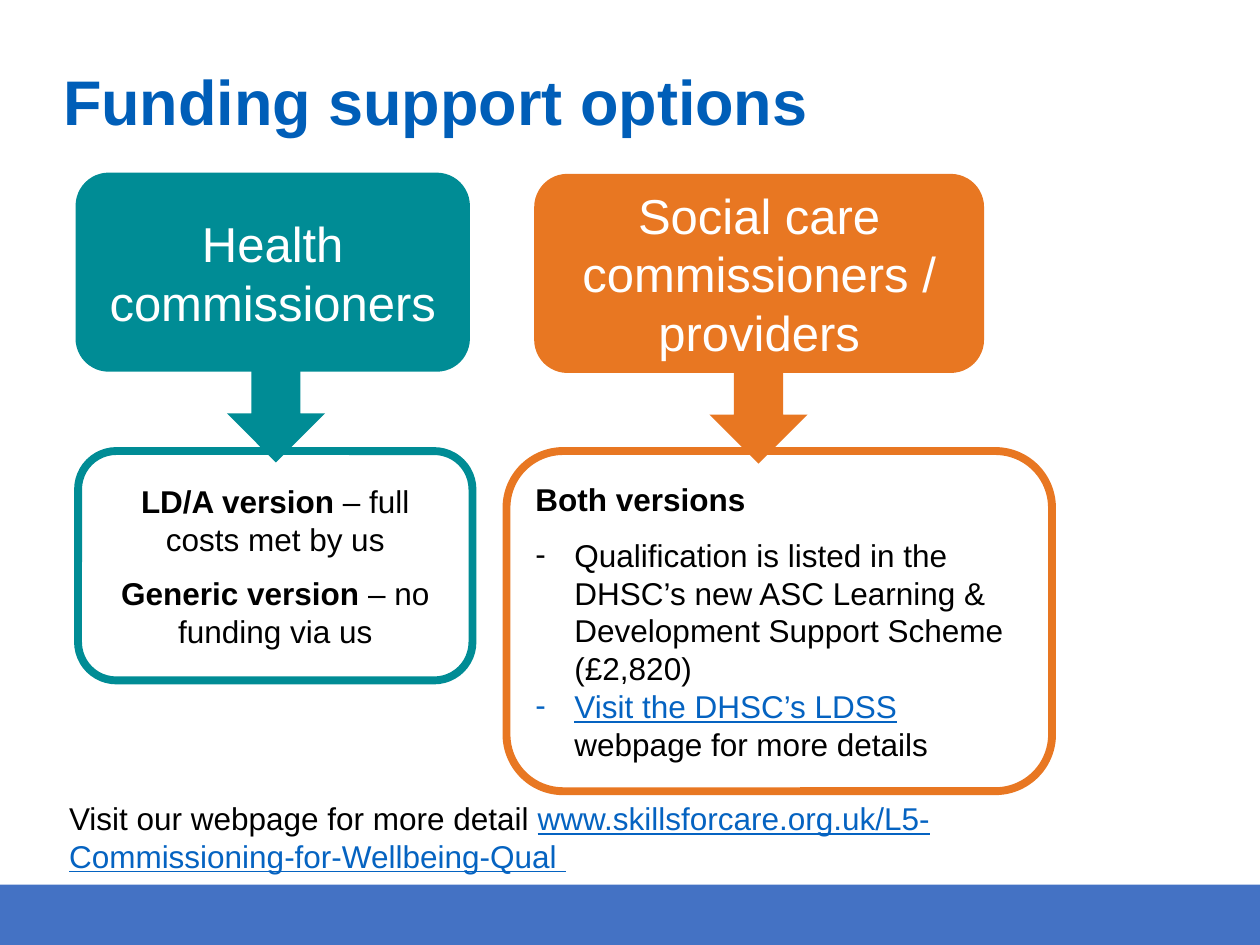
from lxml.etree import SubElement
from pptx import Presentation
from pptx.dml.color import RGBColor
from pptx.enum.shapes import MSO_SHAPE
from pptx.enum.text import MSO_ANCHOR, MSO_AUTO_SIZE, PP_ALIGN
from pptx.oxml.ns import qn
from pptx.util import Inches, Pt

TEAL, ORANGE, BLUE, LINK = "008C95", "E87722", "005EB8", "0563C1"
BLACK, WHITE, BAR = "000000", "FFFFFF", "4472C4"


def color(value):
    return RGBColor.from_string(value)


class FundingSlide:
    """Holds the style and the current slide, and draws each kind of element."""

    font_name = "Arial"
    body_size = 18

    def __init__(self, slide):
        self.slide = slide

    def format_run(self, run, size, fill, bold=False, underline=False):
        font = run.font
        font.name, font.size = self.font_name, Pt(size)
        font.bold, font.underline = bold, underline
        font.color.rgb = color(fill)

    def title(self, wording, box):
        title = self.slide.shapes.title
        title.left, title.top, title.width, title.height = map(Inches, box)
        frame = title.text_frame
        frame.text = wording
        frame.auto_size = MSO_AUTO_SIZE.NONE
        frame.vertical_anchor = MSO_ANCHOR.MIDDLE
        heading = frame.paragraphs[0]
        heading.alignment = PP_ALIGN.LEFT
        heading.line_spacing = 0.9
        self.format_run(heading.runs[0], 36, BLUE, bold=True)

    def shape(self, preset, box, fill=None, line=None):
        shape = self.slide.shapes.add_shape(preset, *map(Inches, box))
        shape.shadow.inherit = False
        if fill:
            shape.fill.solid()
            shape.fill.fore_color.rgb = color(fill)
        else:
            shape.fill.background()
        if line:
            shape.line.color.rgb = color(line)
            shape.line.width = Pt(4.5)
        else:
            shape.line.fill.background()
        return shape

    def heading_box(self, wording, box, fill):
        frame = self.shape(MSO_SHAPE.ROUNDED_RECTANGLE, box, fill).text_frame
        frame.text = wording
        frame.word_wrap = True
        frame.vertical_anchor = MSO_ANCHOR.MIDDLE
        heading = frame.paragraphs[0]
        heading.alignment = PP_ALIGN.CENTER
        self.format_run(heading.runs[0], 28, WHITE)

    def detail_box(self, box, line):
        frame = self.shape(MSO_SHAPE.ROUNDED_RECTANGLE, box, line=line).text_frame
        frame.word_wrap = True
        frame.vertical_anchor = MSO_ANCHOR.MIDDLE
        return frame

    def text_box(self, box):
        frame = self.slide.shapes.add_textbox(*map(Inches, box)).text_frame
        frame.word_wrap = True
        return frame

    def paragraph(self, frame, parts, align=PP_ALIGN.LEFT, before=0, dash=False):
        first = frame.paragraphs[0]
        paragraph = frame.add_paragraph() if first.runs else first
        paragraph.alignment = align
        if before:
            paragraph.space_before = Pt(before)
        if dash:
            properties = paragraph._p.get_or_add_pPr()
            properties.set("marL", str(Inches(0.31)))
            properties.set("indent", str(-Inches(0.31)))
            SubElement(properties, qn("a:buFont"), typeface=self.font_name)
            SubElement(properties, qn("a:buChar"), char="-")
        for wording, style in parts:
            run = paragraph.add_run()
            run.text = wording
            self.format_run(run, self.body_size, **style)


def main():
    presentation = Presentation()
    presentation.slide_width, presentation.slide_height = Inches(10), Inches(7.5)
    page = FundingSlide(presentation.slides.add_slide(presentation.slide_layouts[5]))
    plain = {"fill": BLACK}
    strong = {"fill": BLACK, "bold": True}
    link = {"fill": LINK, "underline": True}

    page.shape(MSO_SHAPE.RECTANGLE, (0, 7.02, 10, 0.48), BAR)
    page.title("Funding support options", (0.4, 0.48, 7.64, 0.71))

    health = page.detail_box((0.62, 3.58, 3.13, 1.82), TEAL)
    page.paragraph(health, [("LD/A version ", strong), ("– full costs met by us", plain)],
                   PP_ALIGN.CENTER)
    page.paragraph(health, [("Generic version ", strong), ("– no funding via us", plain)],
                   PP_ALIGN.CENTER, before=9.5)

    social_care = page.detail_box((4.02, 3.58, 4.33, 2.7), ORANGE)
    page.paragraph(social_care, [("Both versions", strong)])
    page.paragraph(social_care, [("Qualification is listed in the DHSC’s new ASC Learning & "
                                  "Development Support Scheme (£2,820)", plain)],
                   before=10.5, dash=True)
    page.paragraph(social_care, [("Visit the DHSC’s LDSS ", link),
                                 ("webpage for more details", plain)], dash=True)

    page.shape(MSO_SHAPE.DOWN_ARROW, (1.8, 2.88, 0.78, 0.79), TEAL)
    page.shape(MSO_SHAPE.DOWN_ARROW, (5.63, 2.89, 0.78, 0.79), ORANGE)

    webpage = page.text_box((0.45, 6.29, 8.13, 0.71))
    page.paragraph(webpage, [
        ("Visit our webpage for more detail ", plain),
        ("www.skillsforcare.org.uk/L5-Commissioning-for-Wellbeing-Qual ", link)])

    page.heading_box("Social care commissioners / providers", (4.24, 1.38, 3.57, 1.58), ORANGE)
    page.heading_box("Health commissioners", (0.6, 1.37, 3.13, 1.58), TEAL)

    presentation.save("out.pptx")


if __name__ == "__main__":
    main()
